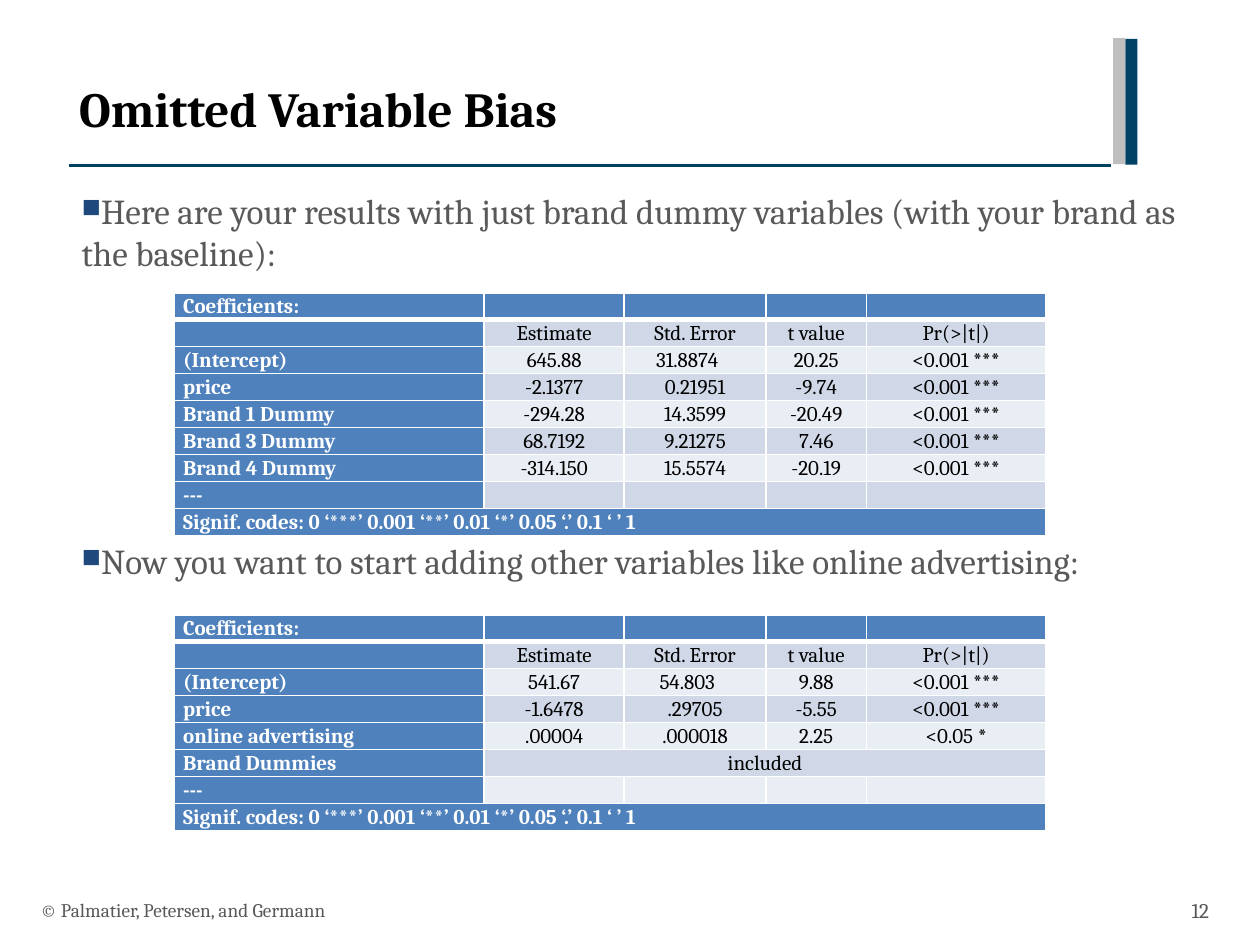
from dataclasses import dataclass
from typing import Any

import lxml.etree
import pptx
import pptx.dml.color
import pptx.enum.shapes
import pptx.enum.text
import pptx.oxml.ns
import pptx.util

Pt = pptx.util.Pt
Align = pptx.enum.text.PP_ALIGN
Anchor = pptx.enum.text.MSO_ANCHOR


@dataclass(frozen=True)
class Theme:
    font: str = "Cambria"
    navy: str = "004264"
    silver: str = "BFBFBF"
    bullet: str = "1F497D"
    grey: str = "595959"
    black: str = "000000"
    white: str = "FFFFFF"
    table_blue: str = "4F81BD"
    bands: tuple[str, str] = ("E9EDF4", "D0D8E8")
    title_size: float = 28
    body_size: float = 20
    table_size: float = 12
    footer_size: float = 11


@dataclass(frozen=True)
class Box:
    left: float
    top: float
    width: float
    height: float

    def emu(self) -> tuple[int, ...]:
        return tuple(Pt(v) for v in (self.left, self.top, self.width, self.height))


@dataclass(frozen=True)
class Coefficient:
    label: str
    values: tuple[str, ...] = ("", "", "", "")
    error_inset: float = 5


@dataclass(frozen=True)
class Regression:
    top: float
    coefficients: tuple[Coefficient, ...]


THEME = Theme()
TABLE_LEFT = 99.7
COLUMN_WIDTHS = (177, 80, 81, 57.5, 102.5)
ROW_HEIGHT = 14.65
CELL_INSET = 5
HEADINGS = (
    Coefficient("Coefficients:"),
    Coefficient("", ("Estimate", "Std. Error", "t value", "Pr(>|t|)")),
)
ENDINGS = (
    Coefficient("---"),
    Coefficient("Signif. codes: 0 ‘***’ 0.001 ‘**’ 0.01 ‘*’ 0.05 ‘.’ 0.1 ‘ ’ 1", ()),
)
STRONG = "<0.001 ***"
REGRESSIONS = (
    Regression(167.3, (
        Coefficient("(Intercept)", ("645.88", "31.8874", "20.25", STRONG), 14),
        Coefficient("price", ("-2.1377", "0.21951", "-9.74", STRONG)),
        Coefficient("Brand 1 Dummy", ("-294.28", "14.3599", "-20.49", STRONG)),
        Coefficient("Brand 3 Dummy", ("68.7192", "9.21275", "7.46", STRONG)),
        Coefficient("Brand 4 Dummy", ("-314.150", "15.5574", "-20.19", STRONG)),
    )),
    Regression(351.3, (
        Coefficient("(Intercept)", ("541.67", "54.803", "9.88", STRONG), 14),
        Coefficient("price", ("-1.6478", ".29705", "-5.55", STRONG)),
        Coefficient("online advertising", (".00004", ".000018", "2.25", "<0.05 *")),
        Coefficient("Brand Dummies", ("included",)),
    )),
)
POINTS = (
    ("Here are your results with just brand dummy variables "
     "(with your brand as the baseline):", 0),
    ("Now you want to start adding other variables like online advertising:", 152),
)


def rgb(color: str) -> pptx.dml.color.RGBColor:
    return pptx.dml.color.RGBColor.from_string(color)


def apply(target: Any, formats: dict[str, Any]) -> None:
    for name, value in formats.items():
        setattr(target, name, value)


def write(paragraph: Any, text: str, size: float, color: str, bold: bool = False) -> None:
    run = paragraph.add_run()
    run.text = text
    apply(run.font, {"name": THEME.font, "size": Pt(size), "bold": bold})
    run.font.color.rgb = rgb(color)


def add_xml(parent: Any, tag: str, **attributes: str) -> Any:
    return lxml.etree.SubElement(parent, pptx.oxml.ns.qn(tag), attributes)


def add_text_box(slide: Any, box: Box, anchor: Any) -> Any:
    frame = slide.shapes.add_textbox(*box.emu()).text_frame
    apply(frame, {"word_wrap": True, "vertical_anchor": anchor})
    return frame


def add_bar(slide: Any, box: Box, color: str) -> None:
    bar = slide.shapes.add_shape(pptx.enum.shapes.MSO_SHAPE.RECTANGLE, *box.emu())
    bar.shadow.inherit = False
    bar.fill.solid()
    bar.fill.fore_color.rgb = rgb(color)
    bar.line.fill.background()


def add_heading(slide: Any, text: str) -> None:
    rule = slide.shapes.add_connector(
        pptx.enum.shapes.MSO_CONNECTOR.STRAIGHT, Pt(39.5), Pt(94.5), Pt(635), Pt(94.5))
    rule.line.width = Pt(2)
    rule.line.color.rgb = rgb(THEME.navy)
    add_xml(rule._element.spPr, "a:effectLst")
    add_bar(slide, Box(643, 22.2, 7, 72), THEME.navy)
    add_bar(slide, Box(636, 21.8, 7, 72), THEME.silver)

    title = slide.shapes.title
    apply(title, dict(zip(("left", "top", "width", "height"),
                          Box(38, 41, 595, 63).emu())))
    apply(title.text_frame, {"vertical_anchor": Anchor.TOP, "word_wrap": True})
    paragraph = title.text_frame.paragraphs[0]
    paragraph.alignment = Align.LEFT
    write(paragraph, text, THEME.title_size, THEME.black, bold=True)


def add_points(slide: Any) -> None:
    frame = add_text_box(slide, Box(39.5, 105, 658, 389.5), Anchor.TOP)
    for index, (text, space_before) in enumerate(POINTS):
        paragraph = frame.add_paragraph() if index else frame.paragraphs[0]
        properties = paragraph._p.get_or_add_pPr()
        apply(properties, {"marL": Pt(18), "indent": Pt(-18)})
        add_xml(add_xml(properties, "a:buClr"), "a:srgbClr", val=THEME.bullet)
        add_xml(properties, "a:buSzPct", val="75000")
        add_xml(properties, "a:buChar", char="■")
        paragraph.space_before = Pt(space_before)
        write(paragraph, text, THEME.body_size, THEME.grey)


def fill_cell(cell: Any, text: str, fill: str, is_label: bool, right_inset: float,
              top_border: float, bottom_border: float) -> None:
    apply(cell, {"margin_left": Pt(CELL_INSET), "margin_right": Pt(right_inset),
                 "margin_top": 0, "margin_bottom": 0})
    paragraph = cell.text_frame.paragraphs[0]
    apply(paragraph, {"alignment": Align.LEFT if is_label else Align.CENTER,
                      "line_spacing": 1.07})
    if text:
        write(paragraph, text, THEME.table_size,
              THEME.white if is_label else THEME.black, bold=is_label)
    else:
        add_xml(paragraph._p, "a:endParaRPr", sz=str(int(THEME.table_size * 100)))
    properties = cell._tc.get_or_add_tcPr()
    for side, width in (("L", 1), ("R", 1), ("T", top_border), ("B", bottom_border)):
        border = add_xml(properties, f"a:ln{side}", w=str(Pt(width)))
        add_xml(add_xml(border, "a:solidFill"), "a:srgbClr", val=THEME.white)
    cell.fill.solid()
    cell.fill.fore_color.rgb = rgb(fill)


def add_regression(slide: Any, regression: Regression) -> None:
    """Draw one results table; a row with too few values merges its last cells."""
    rows = HEADINGS + regression.coefficients + ENDINGS
    last_column = len(COLUMN_WIDTHS) - 1
    box = Box(TABLE_LEFT, regression.top, sum(COLUMN_WIDTHS), ROW_HEIGHT * len(rows))
    table = slide.shapes.add_table(len(rows), len(COLUMN_WIDTHS), *box.emu()).table
    for column, width in zip(table.columns, COLUMN_WIDTHS):
        column.width = Pt(width)
    for r, row in enumerate(rows):
        table.rows[r].height = Pt(ROW_HEIGHT)
        texts = (row.label, *row.values)
        for c in range(last_column + 1):
            fill_cell(
                table.cell(r, c), texts[c] if c < len(texts) else "",
                THEME.table_blue if r == 0 or c == 0 else THEME.bands[r % 2],
                c == 0, row.error_inset if c == 2 else CELL_INSET,
                3 if r == 1 else 1, 3 if r == 0 else 1)
        if len(texts) <= last_column:
            table.cell(r, len(texts) - 1).merge(table.cell(r, last_column))


def add_footer(slide: Any) -> None:
    credit = add_text_box(slide, Box(16, 505.5, 482, 29), Anchor.MIDDLE)
    write(credit.paragraphs[0], "© Palmatier, Petersen, and Germann",
          THEME.footer_size, THEME.grey)
    page = add_text_box(slide, Box(654, 505.5, 44, 29), Anchor.MIDDLE)
    page.paragraphs[0].alignment = Align.RIGHT
    write(page.paragraphs[0], "12", THEME.table_size, THEME.grey)


def main() -> None:
    deck = pptx.Presentation()
    apply(deck, {"slide_width": Pt(720), "slide_height": Pt(540)})
    slide = deck.slides.add_slide(deck.slide_layouts[5])
    add_heading(slide, "Omitted Variable Bias")
    add_points(slide)
    add_footer(slide)
    for regression in REGRESSIONS:
        add_regression(slide, regression)
    deck.save("out.pptx")


if __name__ == "__main__":
    main()
